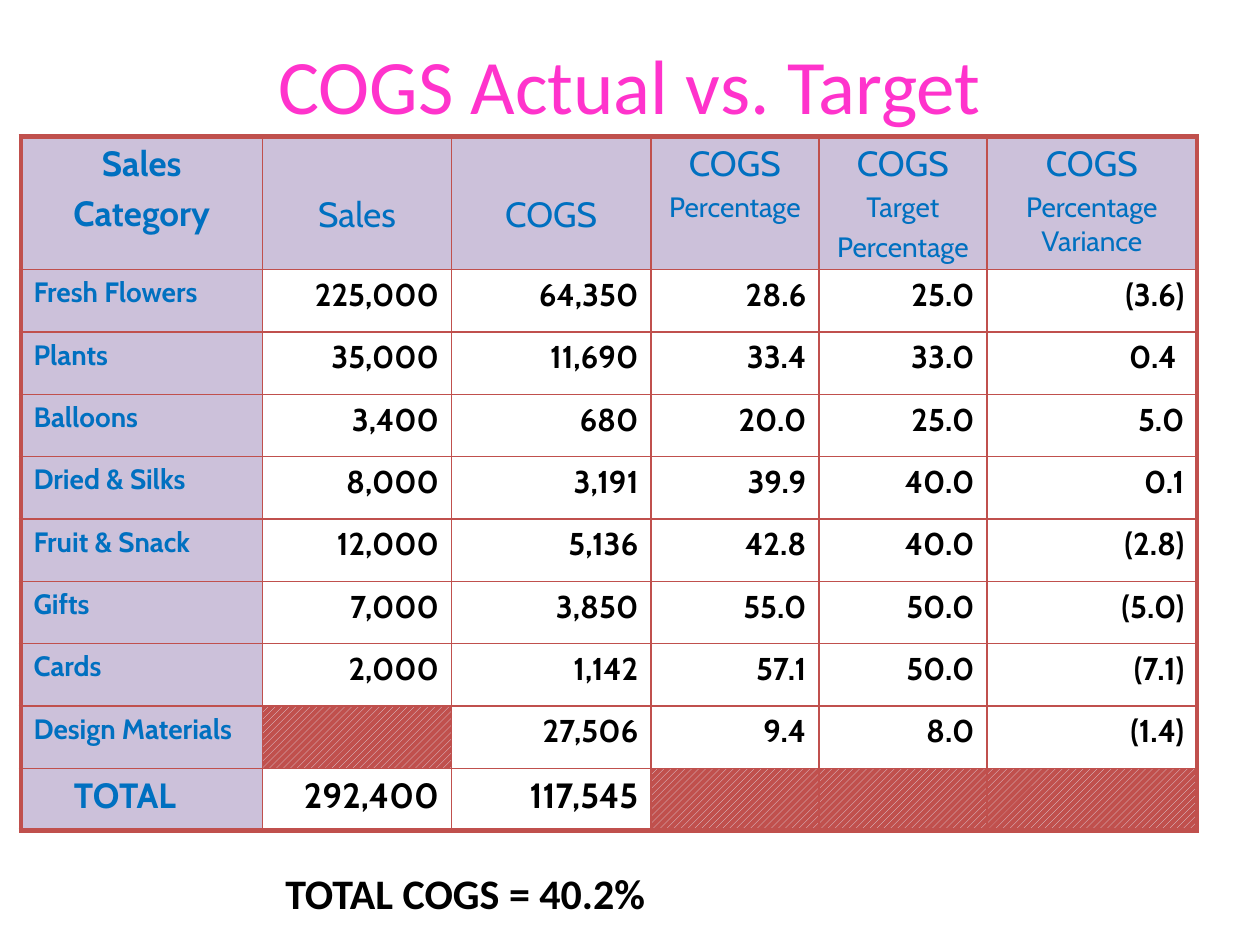
from dataclasses import dataclass

from lxml.etree import SubElement
from pptx import Presentation
from pptx.dml.color import RGBColor
from pptx.enum.dml import MSO_PATTERN
from pptx.enum.text import MSO_ANCHOR, PP_ALIGN
from pptx.oxml.ns import qn
from pptx.util import Inches, Pt


@dataclass(frozen=True)
class Theme:
    """Colours, fonts and type sizes of the slide."""
    pink: str = "FF33CC"
    blue: str = "0070C0"
    black: str = "000000"
    lilac: str = "CCC1DA"
    pale: str = "E6E0EC"
    red: str = "C0504D"
    heading_font: str = "Calibri"
    table_font: str = "Cabin"
    title: int = 44
    note: int = 24
    large: int = 20
    figure: int = 18
    label: int = 16
    outer_line: int = 3
    inner_line: int = 1


HEADERS = (
    ("Sales", "Category"),
    ("Sales",),
    ("COGS",),
    ("COGS", "Percentage"),
    ("COGS", "Target", "Percentage"),
    ("COGS", "Percentage Variance"),
)
ROWS = (
    ("Fresh Flowers", "225,000", "64,350", "28.6", "25.0", "(3.6)"),
    ("Plants", "35,000", "11,690", "33.4", "33.0", "0.4"),
    ("Balloons", "3,400", "680", "20.0", "25.0", "5.0"),
    ("Dried & Silks", "8,000", "3,191", "39.9", "40.0", "0.1"),
    ("Fruit & Snack", "12,000", "5,136", "42.8", "40.0", "(2.8)"),
    ("Gifts", "7,000", "3,850", "55.0", "50.0", "(5.0)"),
    ("Cards", "2,000", "1,142", "57.1", "50.0", "(7.1)"),
    ("Design Materials", "", "27,506", "9.4", "8.0", "(1.4)"),
    ("TOTAL", "292,400", "117,545", "", "", ""),
)
COLUMN_WIDTHS = (11.5, 9, 9.5, 8, 8, 10)
ROW_HEIGHTS = (6.3,) + (2.97,) * len(ROWS)


class SlideBuilder:
    """Draws styled elements on a page with a grid of 60 columns by 45 rows."""

    def __init__(self, deck, theme):
        """Add a blank page to the deck."""
        self.theme = theme
        self.page = deck.slides.add_slide(deck.slide_layouts[6])
        self.column = deck.slide_width / 60
        self.row = deck.slide_height / 45

    def place(self, left, top, width, height):
        """Turn grid units into slide lengths."""
        return (int(left * self.column), int(top * self.row),
                int(width * self.column), int(height * self.row))

    def style(self, para, font, size, color, bold=False, align=PP_ALIGN.LEFT):
        """Format a paragraph and its runs."""
        para.alignment = align
        for span in para.runs:
            span.font.name = font
            span.font.size = Pt(size)
            span.font.bold = bold
            span.font.color.rgb = RGBColor.from_string(color)

    def text(self, words, area, size, color, bold=False,
             align=PP_ALIGN.LEFT, anchor=MSO_ANCHOR.TOP):
        """Add a one-paragraph text box."""
        frame = self.page.shapes.add_textbox(*self.place(*area)).text_frame
        frame.word_wrap = True
        frame.vertical_anchor = anchor
        frame.text = words
        self.style(frame.paragraphs[0], self.theme.heading_font, size, color, bold, align)

    def borders(self, cell, thick_sides):
        """Outline a cell, with heavier lines on the given sides."""
        properties = cell._tc.get_or_add_tcPr()
        for index, side in enumerate("LRTB"):
            points = self.theme.outer_line if side in thick_sides else self.theme.inner_line
            line = SubElement(properties, qn(f"a:ln{side}"), w=str(Pt(points)))
            fill = SubElement(line, qn("a:solidFill"))
            SubElement(fill, qn("a:srgbClr"), val=self.theme.red)
            properties.insert(index, line)

    def solid(self, cell):
        """Fill a heading cell."""
        cell.fill.solid()
        cell.fill.fore_color.rgb = RGBColor.from_string(self.theme.lilac)

    def hatch(self, cell):
        """Fill a cell that holds no value."""
        cell.fill.patterned()
        cell.fill.pattern = MSO_PATTERN.WIDE_UPWARD_DIAGONAL
        cell.fill.fore_color.rgb = RGBColor.from_string(self.theme.pale)
        cell.fill.back_color.rgb = RGBColor.from_string(self.theme.red)

    def header(self, cell, lines, bold):
        """Write a column heading, the single ones level with the second line."""
        theme = self.theme
        self.solid(cell)
        cell.text_frame.text = "\n".join(lines)
        if len(lines) == 1:
            cell.margin_top = Inches(0.45)
        for index, para in enumerate(cell.text_frame.paragraphs):
            size = theme.large if bold or index == 0 else theme.label
            if index:
                para.space_before = Pt(size * 0.2)
            self.style(para, theme.table_font, size, theme.blue, bold, PP_ALIGN.CENTER)

    def category(self, cell, words, total):
        """Write a row heading, indented and larger for the total."""
        theme = self.theme
        self.solid(cell)
        cell.text_frame.text = words
        if total:
            cell.margin_left = Inches(0.42)
        size = theme.large if total else theme.label
        self.style(cell.text_frame.paragraphs[0], theme.table_font, size, theme.blue, True)

    def figure(self, cell, words, total):
        """Write a right-aligned value, or hatch the cell without one."""
        theme = self.theme
        if not words:
            self.hatch(cell)
            return
        cell.fill.background()
        cell.text_frame.text = words
        if words == "0.4":
            cell.margin_right = Inches(0.16)
        size = theme.large if total else theme.figure
        self.style(cell.text_frame.paragraphs[0], theme.table_font, size,
                   theme.black, True, PP_ALIGN.RIGHT)

    def table(self, left, top):
        """Add the comparison table."""
        area = self.place(left, top, sum(COLUMN_WIDTHS), sum(ROW_HEIGHTS))
        last_row, last_column = len(ROWS), len(HEADERS) - 1
        table = self.page.shapes.add_table(last_row + 1, last_column + 1, *area).table
        table.first_row = table.horz_banding = False
        for column, width in zip(table.columns, COLUMN_WIDTHS):
            column.width = int(width * self.column)
        for row, height in zip(table.rows, ROW_HEIGHTS):
            row.height = int(height * self.row)
        for r, values in enumerate((HEADERS,) + ROWS):
            for c, value in enumerate(values):
                cell = table.cell(r, c)
                if r == 0:
                    self.header(cell, value, c == 0)
                elif c == 0:
                    self.category(cell, value, r == last_row)
                else:
                    self.figure(cell, value, r == last_row)
                edges = {"L": c == 0, "R": c == last_column, "T": r == 0, "B": r == last_row}
                self.borders(cell, [side for side, outer in edges.items() if outer])


def main():
    """Build and save the deck."""
    deck = Presentation()
    deck.slide_width, deck.slide_height = Inches(10), Inches(7.5)
    theme = Theme()
    builder = SlideBuilder(deck, theme)
    builder.text("COGS Actual vs. Target", (3, 1, 54, 6), theme.title, theme.pink,
                 align=PP_ALIGN.CENTER, anchor=MSO_ANCHOR.MIDDLE)
    builder.table(1, 6.5)
    builder.text("TOTAL COGS = 40.2%", (13, 41, 18.5, 3), theme.note, theme.black, bold=True)
    deck.save("out.pptx")


if __name__ == "__main__":
    main()
